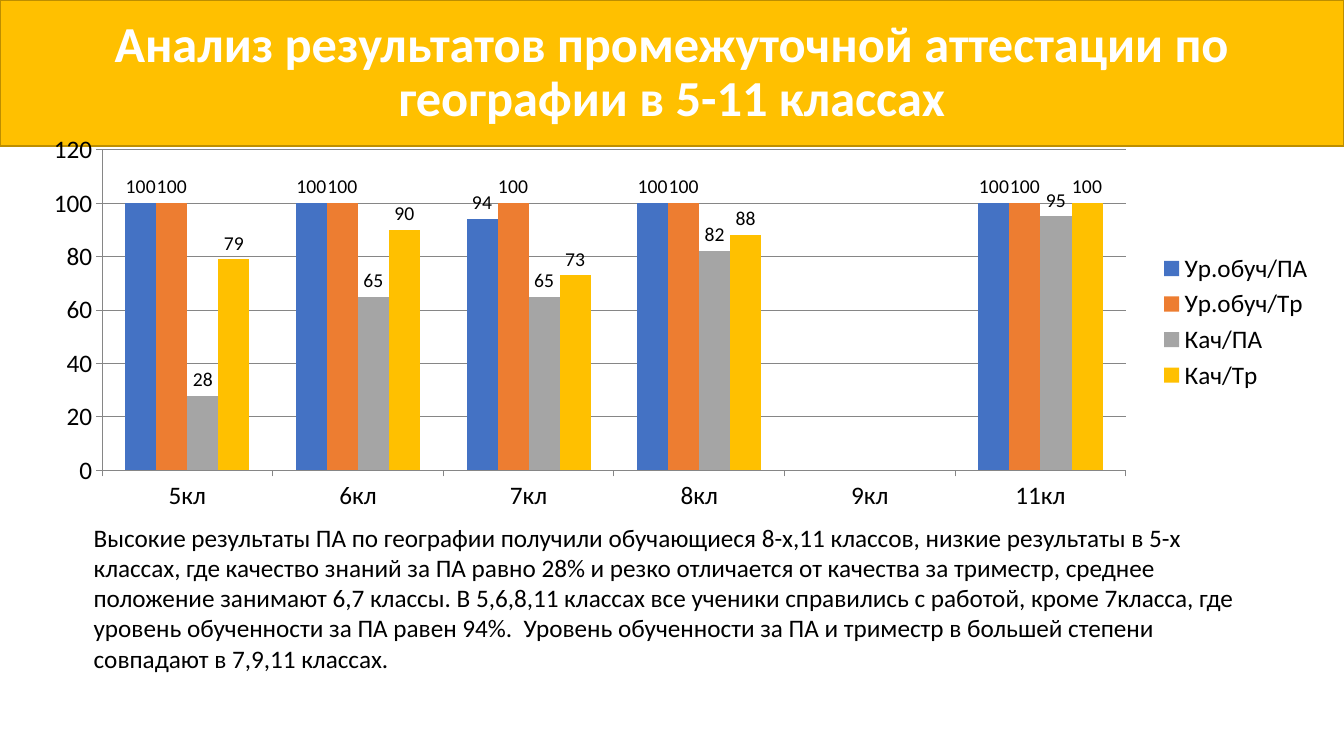
"""Build a slide on geography assessment results for grades 5-11."""
from dataclasses import dataclass
from typing import Optional

from lxml import etree
from pptx import Presentation
from pptx.chart.chart import Chart
from pptx.chart.data import CategoryChartData
from pptx.dml.color import RGBColor
from pptx.enum.chart import XL_CHART_TYPE, XL_LABEL_POSITION, XL_LEGEND_POSITION, XL_TICK_MARK
from pptx.enum.shapes import MSO_SHAPE
from pptx.enum.text import MSO_ANCHOR, PP_ALIGN
from pptx.oxml.ns import qn
from pptx.text.text import TextFrame
from pptx.util import Cm, Pt

CLUSTERED = XL_CHART_TYPE.COLUMN_CLUSTERED
OUTSIDE_END = XL_LABEL_POSITION.OUTSIDE_END
LEGEND_RIGHT = XL_LEGEND_POSITION.RIGHT
TICK_OUT = XL_TICK_MARK.OUTSIDE
RECTANGLE = MSO_SHAPE.RECTANGLE
TOP, MIDDLE = MSO_ANCHOR.TOP, MSO_ANCHOR.MIDDLE
LEFT, CENTER = PP_ALIGN.LEFT, PP_ALIGN.CENTER

FONT = "Calibri"
COLORS = {
    "white": "FFFFFF",
    "black": "000000",
    "grid": "868686",
    "banner_edge": "BD8E00",
    "blue": "4472C4",
    "orange": "ED7D31",
    "gray": "A5A5A5",
    "gold": "FFC000",
}
HEADING = "Анализ результатов промежуточной аттестации по географии в 5-11 классах"
CONCLUSION = (
    "Высокие результаты ПА по географии получили обучающиеся 8-х,11 классов, "
    "низкие результаты в 5-х классах, где качество знаний за ПА равно 28% и резко "
    "отличается от качества за триместр, среднее положение занимают 6,7 классы. "
    "В 5,6,8,11 классах все ученики справились с работой, кроме 7класса, где уровень "
    "обученности за ПА равен 94%.  Уровень обученности за ПА и триместр в большей "
    "степени совпадают в 7,9,11 классах."
)
GRADES = ["5кл", "6кл", "7кл", "8кл", "9кл", "11кл"]
PLOT_AREA = {"x": 0.057, "y": 0.06, "w": 0.79, "h": 0.82}


@dataclass(frozen=True)
class Indicator:
    name: str
    color: str
    scores: tuple[Optional[int], ...]


INDICATORS = [
    Indicator("Ур.обуч/ПА", "blue", (100, 100, 94, 100, None, 100)),
    Indicator("Ур.обуч/Тр", "orange", (100, 100, 100, 100, None, 100)),
    Indicator("Кач/ПА", "gray", (28, 65, 65, 82, None, 95)),
    Indicator("Кач/Тр", "gold", (79, 90, 73, 88, None, 100)),
]


def rgb(name: str) -> RGBColor:
    return RGBColor.from_string(COLORS[name])


def write_text(frame: TextFrame, text: str, *, size: float, color: str = "black",
               bold: bool = False, align: PP_ALIGN = LEFT, anchor: MSO_ANCHOR = TOP,
               spacing: float = 1.0) -> None:
    frame.word_wrap = True
    frame.vertical_anchor = anchor
    paragraph = frame.paragraphs[0]
    paragraph.alignment = align
    paragraph.line_spacing = spacing
    run = paragraph.add_run()
    run.text = text
    run.font.name = FONT
    run.font.size = Pt(size)
    run.font.bold = bold
    run.font.color.rgb = rgb(color)


def add_banner(slide, width: int) -> None:
    banner = slide.shapes.add_shape(RECTANGLE, 0, 0, width, Cm(3.68))
    banner.shadow.inherit = False
    banner.fill.solid()
    banner.fill.fore_color.rgb = rgb("gold")
    banner.line.color.rgb = rgb("banner_edge")
    banner.line.width = Pt(1)
    write_text(banner.text_frame, HEADING, size=36, color="white", bold=True,
               align=CENTER, anchor=MIDDLE, spacing=0.9)


def fix_plot_area(chart: Chart) -> None:
    plot_area = chart.plots[0]._element.getparent()
    for old_layout in plot_area.findall(qn("c:layout")):
        plot_area.remove(old_layout)
    layout = etree.Element(qn("c:layout"))
    manual = etree.SubElement(layout, qn("c:manualLayout"))
    settings = {"layoutTarget": "inner", "xMode": "edge", "yMode": "edge", **PLOT_AREA}
    for tag, value in settings.items():
        etree.SubElement(manual, qn(f"c:{tag}")).set("val", str(value))
    plot_area.insert(0, layout)


def style_axes(chart: Chart) -> None:
    value_axis = chart.value_axis
    value_axis.minimum_scale, value_axis.maximum_scale = 0, 120
    value_axis.major_unit = 20
    value_axis.has_major_gridlines = True
    for axis in (chart.category_axis, value_axis):
        axis.major_tick_mark = TICK_OUT
    for rule in (chart.category_axis.format.line, value_axis.format.line,
                 value_axis.major_gridlines.format.line):
        rule.color.rgb = rgb("grid")
        rule.width = Pt(0.75)


def add_results_chart(slide) -> None:
    results = CategoryChartData()
    results.categories = GRADES
    for indicator in INDICATORS:
        results.add_series(indicator.name, indicator.scores)
    chart = slide.shapes.add_chart(
        CLUSTERED, Cm(0.71), Cm(3.18), Cm(32.66), Cm(9.86), results).chart
    chart.has_title = False
    chart.font.name = FONT
    chart.font.size = Pt(18)
    chart.font.color.rgb = rgb("black")
    chart.has_legend = True
    chart.legend.position = LEGEND_RIGHT
    chart.legend.include_in_layout = False
    plot = chart.plots[0]
    plot.gap_width, plot.overlap = 150, 0
    plot.vary_by_categories = False
    for indicator, columns in zip(INDICATORS, plot.series):
        columns.format.fill.solid()
        columns.format.fill.fore_color.rgb = rgb(indicator.color)
        labels = columns.data_labels
        labels.show_value = True
        labels.position = OUTSIDE_END
        labels.font.name = FONT
        labels.font.size = Pt(14)
        labels.font.color.rgb = rgb("black")
    style_axes(chart)
    fix_plot_area(chart)


def main() -> None:
    presentation = Presentation()
    presentation.slide_width, presentation.slide_height = Cm(33.87), Cm(19.05)
    slide = presentation.slides.add_slide(presentation.slide_layouts[6])
    add_banner(slide, presentation.slide_width)
    add_results_chart(slide)
    conclusion = slide.shapes.add_textbox(Cm(2.11), Cm(13.03), Cm(30.15), Cm(4.11))
    write_text(conclusion.text_frame, CONCLUSION, size=18)
    presentation.save("out.pptx")


if __name__ == "__main__":
    main()
